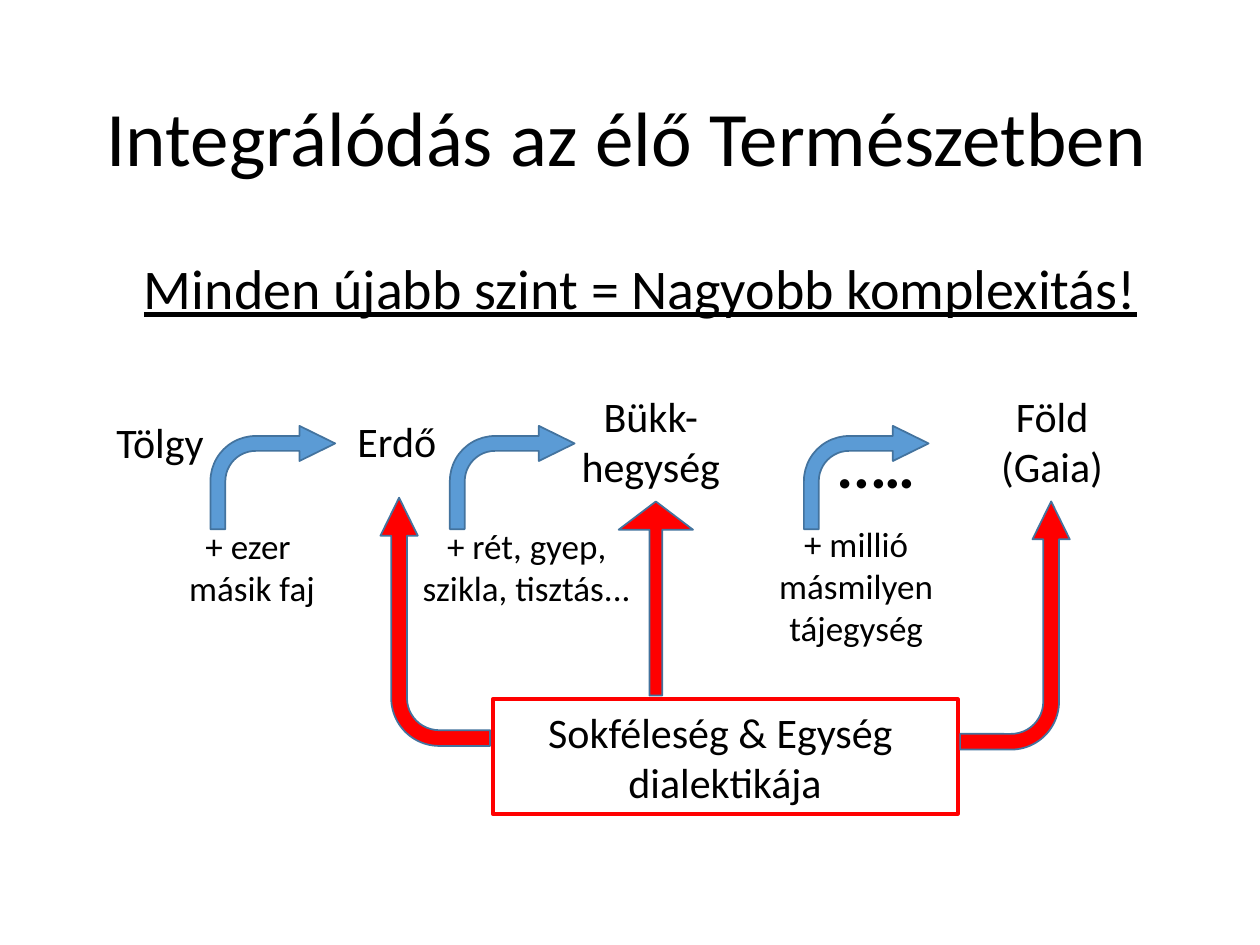
"""Builds a slide on how living nature integrates into ever more complex levels."""
from pptx import Presentation
from pptx.dml.color import RGBColor
from pptx.enum import shapes, text
from pptx.util import Inches, Pt

COLORS = {"text": "000000", "step": "5B9BD5", "unity": "FF0000", "outline": "43739E"}
BENT = (0.144, 0.17, 0.346, 0.438)


def write(holder, wording, size, bold=None, underline=None):
    frame = holder.text_frame
    frame.word_wrap = True
    frame.text = wording
    for paragraph in frame.paragraphs:
        paragraph.alignment = text.PP_ALIGN.CENTER
        for run in paragraph.runs:
            run.font.name = "Calibri"
            run.font.size = Pt(size)
            run.font.bold = bold
            run.font.underline = underline
            run.font.color.rgb = RGBColor.from_string(COLORS["text"])


def add_arrow(kind, place, color, adjustments, rotation=0):
    arrow = slide.shapes.add_shape(kind, *map(Inches, place))
    arrow.shadow.inherit = False
    arrow.rotation = rotation
    for index, value in enumerate(adjustments):
        arrow.adjustments[index] = value
    arrow.fill.solid()
    arrow.fill.fore_color.rgb = RGBColor.from_string(COLORS[color])
    arrow.line.color.rgb = RGBColor.from_string(COLORS["outline"])
    arrow.line.width = Pt(1)
    return arrow


deck = Presentation()
deck.slide_width, deck.slide_height = Inches(10), Inches(7.5)
slide = deck.slides.add_slide(deck.slide_layouts[5])

title = slide.shapes.title
title.left, title.top, title.width, title.height = map(Inches, (0.56, 0.4, 8.83, 1.45))
write(title, "Integrálódás az élő Természetben", 44)
title.text_frame.vertical_anchor = text.MSO_ANCHOR.MIDDLE
title.text_frame.paragraphs[0].line_spacing = 0.9

labels = [
    ("Tölgy", 24, (0.77, 3.26, 1, 0.5)),
    ("Erdő", 24, (2.65, 3.25, 1, 0.5)),
    ("Bükk-hegység", 24, (4.48, 3.05, 1.37, 0.91)),
    ("Föld (Gaia)", 24, (7.69, 3.05, 1.32, 0.91)),
    ("+ ezer \vmásik faj", 20, (1.34, 4.11, 1.32, 0.77)),
    ("+ rét, gyep, szikla, tisztás...", 20, (3.22, 4.11, 1.92, 0.77)),
    ("+ millió másmilyen tájegység", 20, (6, 4.1, 1.59, 1.11)),
]
for wording, size, place in labels:
    write(slide.shapes.add_textbox(*map(Inches, place)), wording, size)

further_levels = slide.shapes.add_textbox(*map(Inches, (6.45, 3.33, 1, 0.71)))
write(further_levels, "..…", 36, bold=True)

for left in (1.67, 3.57, 6.38):
    add_arrow(shapes.MSO_SHAPE.BENT_ARROW, (left, 3.38, 0.99, 0.82), "step", BENT)

dialectic = slide.shapes.add_shape(
    shapes.MSO_SHAPE.RECTANGLE, *map(Inches, (3.91, 5.55, 3.69, 0.91)))
dialectic.shadow.inherit = False
dialectic.fill.background()
dialectic.line.color.rgb = RGBColor.from_string(COLORS["unity"])
dialectic.line.width = Pt(2.25)
write(dialectic, "Sokféleség & Egység \ndialektikája", 24)

add_arrow(shapes.MSO_SHAPE.BENT_ARROW, (2.47, 4.5, 1.97, 0.87), "unity", BENT, 270)
to_earth = add_arrow(shapes.MSO_SHAPE.BENT_ARROW, (7.07, 4.53, 1.97, 0.87), "unity", BENT, 270)
to_earth._element.spPr.xfrm.set("flipV", "1")
add_arrow(shapes.MSO_SHAPE.DOWN_ARROW, (4.91, 3.98, 0.59, 1.54), "unity", (0.173, 0.379), 180)

motto = slide.shapes.add_textbox(*map(Inches, (0.82, 1.96, 8.53, 0.64)))
write(motto, "Minden újabb szint = Nagyobb komplexitás!", 32, underline=True)

deck.save("out.pptx")
